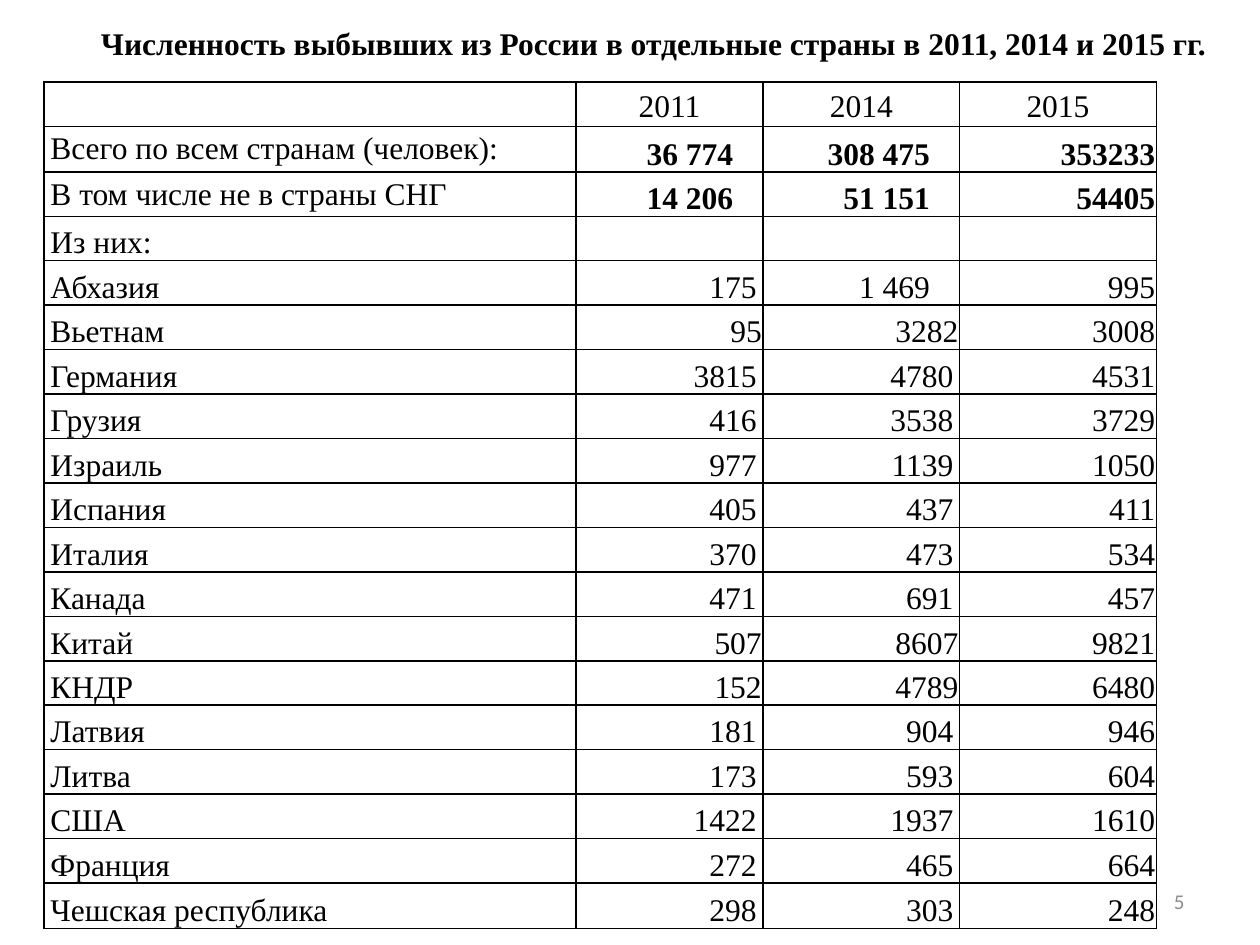
import dataclasses
import typing

import pptx
import pptx.dml.color
import pptx.enum.text
import pptx.oxml
import pptx.oxml.ns
import pptx.util

Pt = pptx.util.Pt
RGBColor = pptx.dml.color.RGBColor
Align = pptx.enum.text.PP_ALIGN
Anchor = pptx.enum.text.MSO_ANCHOR

BLACK = RGBColor(0, 0, 0)
WHITE = RGBColor(255, 255, 255)
GREY = RGBColor(0x8C, 0x8C, 0x8C)
SERIF = "Times New Roman"


@dataclasses.dataclass
class Row:
    name: str
    nums: tuple[str, ...]
    bold: bool = False
    tight: bool = False  # numbers sit close to the cell edge
    high: bool = False


YEARS = ("2011", "2014", "2015")
ROWS = [
    Row("Всего по всем странам (человек):", ("36 774", "308 475", "353233"),
        bold=True, high=True),
    Row("В том числе не в страны СНГ", ("14 206", "51 151", "54405"), bold=True),
    Row("Из них:", ("", "", "")),
    Row("Абхазия", ("175", "1 469", "995")),
    Row("Вьетнам", ("95", "3282", "3008"), tight=True),
    Row("Германия", ("3815", "4780", "4531")),
    Row("Грузия", ("416", "3538", "3729")),
    Row("Израиль", ("977", "1139", "1050")),
    Row("Испания", ("405", "437", "411")),
    Row("Италия", ("370", "473", "534")),
    Row("Канада", ("471", "691", "457")),
    Row("Китай", ("507", "8607", "9821"), tight=True),
    Row("КНДР", ("152", "4789", "6480"), tight=True),
    Row("Латвия", ("181", "904", "946")),
    Row("Литва", ("173", "593", "604")),
    Row("США", ("1422", "1937", "1610")),
    Row("Франция", ("272", "465", "664")),
    Row("Чешская республика", ("298", "303", "248"), high=True),
]
WIDTHS = (304, 106.8, 112.4, 112.4)
LOW, HIGH = 25.4, 26


def write(frame: typing.Any, text: str, align: Align, size: float = 18,
          face: str = SERIF, color: RGBColor = BLACK, bold: bool = False) -> None:
    frame.text = text
    par = frame.paragraphs[0]
    par.alignment = align
    for run in par.runs:
        run.font.size = Pt(size)
        run.font.name = face
        run.font.bold = bold
        run.font.color.rgb = color


def border(cell: typing.Any) -> None:
    props = cell._tc.get_or_add_tcPr()
    for side in "LRTB":
        props.append(pptx.oxml.parse_xml(
            f'<a:ln{side} {pptx.oxml.ns.nsdecls("a")} w="{Pt(1)}">'
            f'<a:solidFill><a:srgbClr val="{BLACK}"/></a:solidFill></a:ln{side}>'))


def put(cell: typing.Any, text: str, align: Align, anchor: Anchor,
        bold: bool = False, tight: bool = False, white: bool = False) -> None:
    write(cell.text_frame, text, align, bold=bold)
    edge = 0.7 if tight else 3.6
    cell.margin_left = cell.margin_right = Pt(edge)
    cell.margin_top = Pt(0.7 if tight else 0)
    cell.margin_bottom = Pt(0)
    # Grouped thousands stand further in from the right
    if " " in text and align == Align.RIGHT:
        cell.margin_right = Pt(17)
    if not tight:
        cell.text_frame.paragraphs[0].line_spacing = 1.15
    cell.vertical_anchor = anchor
    border(cell)
    if white:
        cell.fill.solid()
        cell.fill.fore_color.rgb = WHITE
    else:
        cell.fill.background()


def fill(table: typing.Any) -> None:
    table.first_row = table.horz_banding = False
    for col, width in zip(table.columns, WIDTHS):
        col.width = Pt(width)

    # Header
    table.rows[0].height = Pt(LOW)
    for c, text in enumerate(("",) + YEARS):
        put(table.cell(0, c), text, Align.CENTER, Anchor.MIDDLE)

    # Totals and countries
    for r, row in enumerate(ROWS, 1):
        table.rows[r].height = Pt(HIGH if row.high else LOW)
        put(table.cell(r, 0), row.name, Align.JUSTIFY,
            Anchor.TOP if row.bold else Anchor.BOTTOM)
        for c, num in enumerate(row.nums, 1):
            put(table.cell(r, c), num, Align.RIGHT, Anchor.BOTTOM, row.bold,
                tight=row.tight or c == len(YEARS), white=c > 1)


def main() -> None:
    deck = pptx.Presentation()
    deck.slide_width, deck.slide_height = Pt(720), Pt(540)
    slide = deck.slides.add_slide(deck.slide_layouts[5])

    # Title
    title = slide.shapes.title
    title.left, title.top = Pt(19.4), Pt(-11.5)
    title.width, title.height = Pt(708.5), Pt(50.4)
    frame = title.text_frame
    frame.auto_size = pptx.enum.text.MSO_AUTO_SIZE.NONE
    frame.vertical_anchor = Anchor.BOTTOM
    write(frame, "Численность выбывших из России в отдельные страны "
          "в 2011, 2014 и 2015 гг.", Align.CENTER, bold=True)

    # Table
    grid = slide.shapes.add_table(len(ROWS) + 1, len(WIDTHS), Pt(25.2), Pt(46.8),
                                  Pt(sum(WIDTHS)), Pt(483.8))
    fill(grid.table)

    # Page number
    page = slide.shapes.add_textbox(Pt(516), Pt(500.4), Pt(168), Pt(28.8))
    page.text_frame.word_wrap = True
    page.text_frame.vertical_anchor = Anchor.MIDDLE
    write(page.text_frame, "5", Align.RIGHT, 12, "Calibri", GREY)

    deck.save("out.pptx")


if __name__ == "__main__":
    main()
